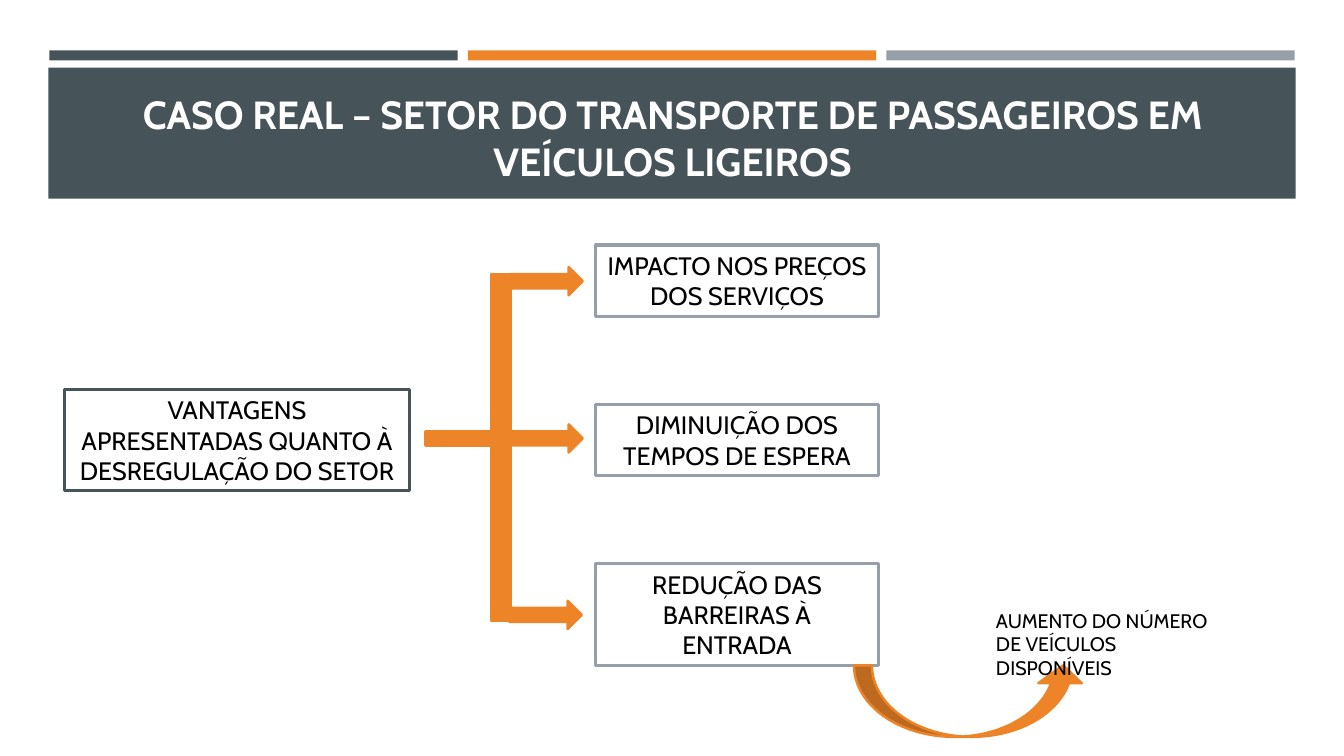
from pptx import Presentation
from pptx.dml.color import RGBColor
from pptx.enum import shapes, text
from pptx.util import Inches, Pt

COLORS = {
    "slate": "465359",
    "orange": "ED8428",
    "gray": "969FA7",
    "white": "FFFFFF",
    "black": "000000",
}
SHAPE = shapes.MSO_SHAPE
FONT = "Cabin"


def rgb(name):
    return RGBColor.from_string(COLORS[name])


def write(sp, words, size, color, align, anchor, bold=False):
    tf = sp.text_frame
    tf.word_wrap = True
    tf.auto_size = text.MSO_AUTO_SIZE.NONE
    tf.vertical_anchor = anchor
    p = tf.paragraphs[0]
    p.text = words
    p.alignment = align
    p.font.name = FONT
    p.font.size = Pt(size)
    p.font.bold = bold
    p.font.color.rgb = rgb(color)


def add_block(s, kind, at, fill=None, line=None, width=1.75):
    sp = s.shapes.add_shape(kind, *map(Inches, at))
    sp.shadow.inherit = False
    if fill:
        sp.fill.solid()
        sp.fill.fore_color.rgb = rgb(fill)
    else:
        sp.fill.background()
    if line:
        sp.line.color.rgb = rgb(line)
        sp.line.width = Pt(width)
    else:
        sp.line.fill.background()
    return sp


def add_box(s, words, at, line):
    sp = add_block(s, SHAPE.RECTANGLE, at, line=line, width=2.25)
    write(sp, words, 18, "black", text.PP_ALIGN.CENTER, text.MSO_ANCHOR.MIDDLE)


def add_flow(s, kind, at):
    return add_block(s, kind, at, fill="orange", line="orange")


def add_header(s, words):
    for i, color in enumerate(("slate", "orange", "gray")):
        add_block(s, SHAPE.RECTANGLE, (0.49 + 4.15 * i, 0.5, 4.05, 0.1), fill=color)
    add_block(s, SHAPE.RECTANGLE, (0.48, 0.67, 12.37, 1.3), fill="slate")
    title = s.shapes.title
    title.left, title.top = Inches(0.64), Inches(0.77)
    title.width, title.height = Inches(12.06), Inches(1.11)
    write(title, words, 28, "white", text.PP_ALIGN.CENTER,
          text.MSO_ANCHOR.BOTTOM, bold=True)
    s.shapes.element.append(title.element)


def add_note(s, words, at):
    sp = s.shapes.add_textbox(*map(Inches, at))
    write(sp, words, 14, "black", text.PP_ALIGN.LEFT, text.MSO_ANCHOR.TOP)


def main():
    prs = Presentation()
    prs.slide_width, prs.slide_height = Inches(13.33), Inches(7.5)
    s = prs.slides.add_slide(prs.slide_layouts[5])

    add_header(s, "CASO REAL – SETOR DO TRANSPORTE DE PASSAGEIROS EM VEÍCULOS LIGEIROS")

    add_box(s, "VANTAGENS APRESENTADAS QUANTO À DESREGULAÇÃO DO SETOR",
            (0.64, 3.86, 3.42, 1.01), "slate")
    advantages = (
        ("IMPACTO NOS PREÇOS DOS SERVIÇOS", 0.71),
        ("DIMINUIÇÃO DOS TEMPOS DE ESPERA", 0.71),
        ("REDUÇÃO DAS BARREIRAS À ENTRADA", 1.01),
    )
    for i, (words, height) in enumerate(advantages):
        add_box(s, words, (5.91, 2.43 + 1.58 * i, 2.8, height), "gray")

    add_flow(s, SHAPE.RECTANGLE, (4.22, 4.28, 0.83, 0.14))
    add_flow(s, SHAPE.RECTANGLE, (4.87, 2.72, 0.2, 3.44))
    for left, top in ((5.06, 2.65), (5.06, 4.21), (5.05, 5.96)):
        add_flow(s, SHAPE.RIGHT_ARROW, (left, top, 0.72, 0.28))

    curve = add_flow(s, SHAPE.CURVED_UP_ARROW, (8.47, 6.6, 2.29, 0.71))
    for i, value in enumerate((0.25, 0.606, 0.25)):
        curve.adjustments[i] = value
    add_note(s, "AUMENTO DO NÚMERO DE VEÍCULOS DISPONÍVEIS", (9.78, 5.99, 2.52, 0.57))

    prs.save("out.pptx")


if __name__ == "__main__":
    main()
